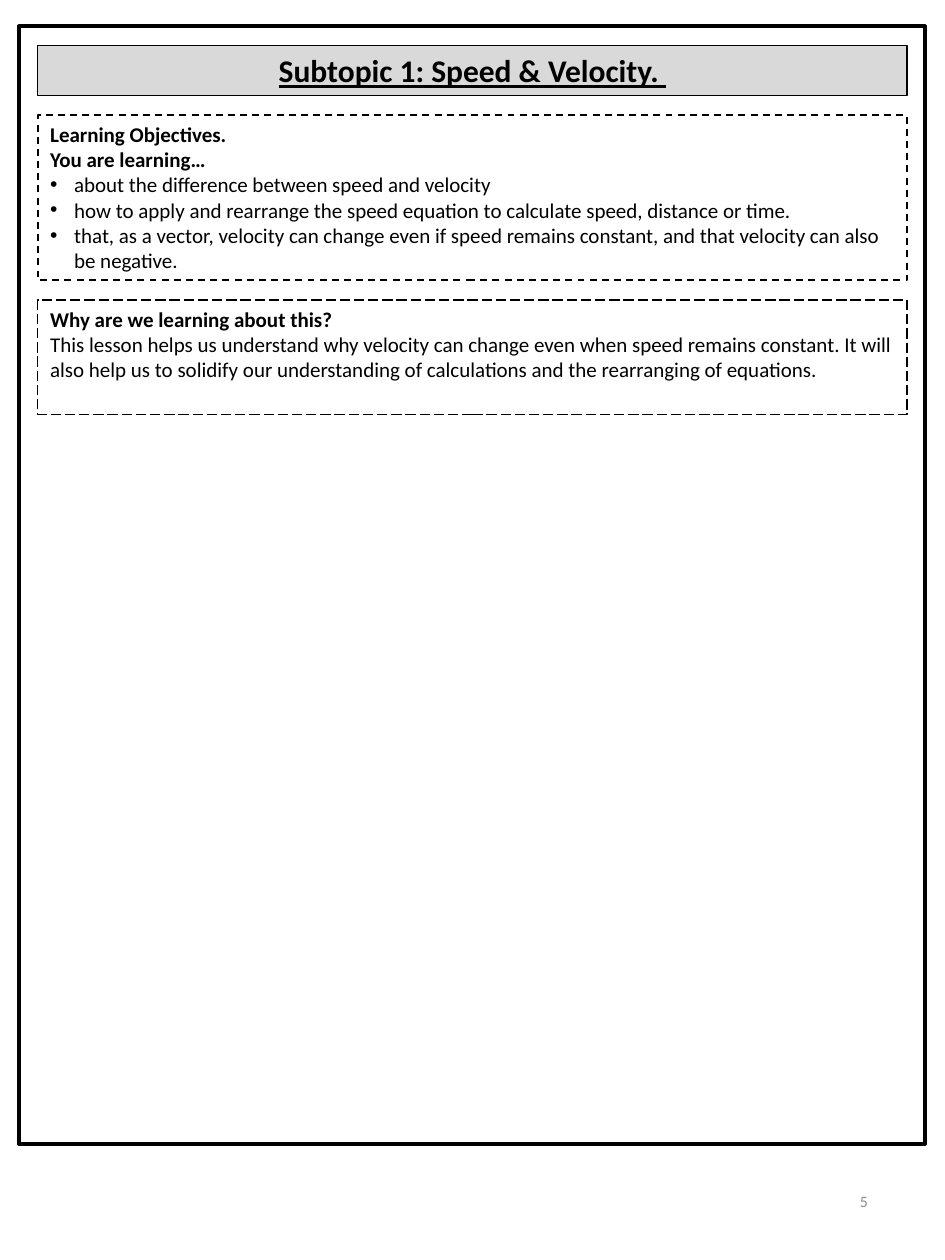
from dataclasses import dataclass
from typing import Optional

import lxml.etree
import pptx
import pptx.dml.color
import pptx.enum.dml
import pptx.enum.shapes
import pptx.enum.text
import pptx.oxml.ns
import pptx.util

COLORS = {"ink": "000000", "banner": "D9D9D9", "number": "8C8C8C"}
FONT = "Calibri"
COL = 7.5 / 50
ROW = 10 / 100
LEFT, SPAN = 2, 46
TOP, GAP = 3.6, 1.55
INDENT = pptx.util.Inches(0.19)
ALIGN = pptx.enum.text.PP_ALIGN
DASH = pptx.enum.dml.MSO_LINE


@dataclass
class Para:
    text: str
    size: float = 12
    bold: bool = False
    underline: bool = False
    bullet: bool = False
    color: str = "ink"
    align: ALIGN = ALIGN.LEFT


@dataclass
class Panel:
    rows: float
    paras: list[Para]
    line: float = 0.75
    dash: Optional[DASH] = None
    fill: Optional[str] = None


PANELS = [
    Panel(4, [Para("Subtopic 1: Speed & Velocity. ", 18, True, True, align=ALIGN.CENTER)],
          fill="banner"),
    Panel(13.1, [
        Para("Learning Objectives.", bold=True),
        Para("You are learning…", bold=True),
        Para("about the difference between speed and velocity", bullet=True),
        Para("how to apply and rearrange the speed equation to calculate speed, "
             "distance or time.", bullet=True),
        Para("that, as a vector, velocity can change even if speed remains constant, "
             "and that velocity can also be negative.", bullet=True),
    ], line=1, dash=DASH.DASH),
    Panel(9.1, [
        Para("Why are we learning about this?", bold=True),
        Para("This lesson helps us understand why velocity can change even when speed "
             "remains constant. It will also help us to solidify our understanding of "
             "calculations and the rearranging of equations."),
    ], dash=DASH.LONG_DASH),
]


def rgb(name: str) -> pptx.dml.color.RGBColor:
    return pptx.dml.color.RGBColor.from_string(COLORS[name])


def cells(col: float, row: float, cols: float, rows: float) -> list[int]:
    return [pptx.util.Inches(v) for v in (col * COL, row * ROW, cols * COL, rows * ROW)]


def add_bullet(p) -> None:
    pPr = p._p.get_or_add_pPr()
    pPr.set("marL", str(INDENT))
    pPr.set("indent", str(-INDENT))
    qn = pptx.oxml.ns.qn
    lxml.etree.SubElement(pPr, qn("a:buFont"), typeface="Arial")
    lxml.etree.SubElement(pPr, qn("a:buChar"), char="•")


def write(tf, paras: list[Para], anchor=pptx.enum.text.MSO_ANCHOR.TOP) -> None:
    tf.word_wrap = True
    tf.vertical_anchor = anchor
    for i, para in enumerate(paras):
        p = tf.add_paragraph() if i else tf.paragraphs[0]
        p.alignment = para.align
        if para.bullet:
            add_bullet(p)
        r = p.add_run()
        r.text = para.text
        r.font.name = FONT
        r.font.size = pptx.util.Pt(para.size)
        r.font.bold = para.bold
        r.font.underline = para.underline
        r.font.color.rgb = rgb(para.color)


def add_panel(s, panel: Panel, col: float, row: float, cols: float) -> None:
    sp = s.shapes.add_shape(pptx.enum.shapes.MSO_SHAPE.RECTANGLE,
                            *cells(col, row, cols, panel.rows))
    sp.shadow.inherit = False
    if panel.fill:
        sp.fill.solid()
        sp.fill.fore_color.rgb = rgb(panel.fill)
    else:
        sp.fill.background()
    sp.line.color.rgb = rgb("ink")
    sp.line.width = pptx.util.Pt(panel.line)
    if panel.dash:
        sp.line.dash_style = panel.dash
    write(sp.text_frame, panel.paras)


def main() -> None:
    prs = pptx.Presentation()
    prs.slide_width = pptx.util.Inches(7.5)
    prs.slide_height = pptx.util.Inches(10)
    s = prs.slides.add_slide(prs.slide_layouts[6])

    add_panel(s, Panel(88.7, [], line=2.25), 1, 2.1, 47.93)
    row = TOP
    for panel in PANELS:
        add_panel(s, panel, LEFT, row, SPAN)
        row += panel.rows + GAP

    sp = s.shapes.add_textbox(*cells(35.33, 92.7, 11.25, 5.3))
    write(sp.text_frame, [Para("5", 9, color="number", align=ALIGN.RIGHT)],
          pptx.enum.text.MSO_ANCHOR.MIDDLE)
    prs.save("out.pptx")


if __name__ == "__main__":
    main()
